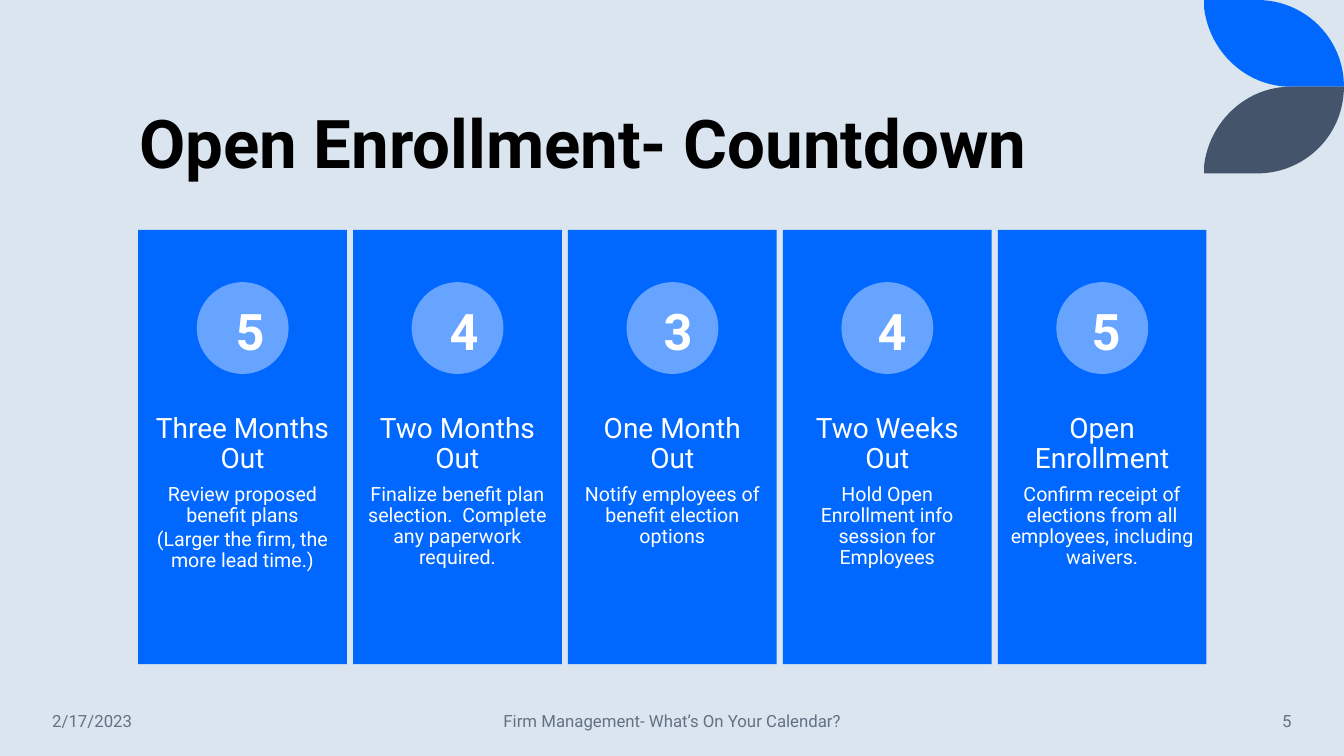
from pptx import Presentation
from pptx.dml.color import RGBColor
from pptx.enum.shapes import MSO_SHAPE as Preset
from pptx.enum.text import MSO_ANCHOR as Anchor, MSO_AUTO_SIZE as AutoSize, PP_ALIGN as Align
from pptx.util import Inches, Pt

WIDTH, HEIGHT = Inches(13.333), Inches(7.5)
BLUE, LIGHT_BLUE, SLATE = "0068FF", "66A4FF", "44546A"
BACKGROUND, WHITE, BLACK, GRAY = "DAE5EF", "FFFFFF", "000000", "637183"

CARD_LEFT, CARD_PITCH, CARD_WIDTH = 10.28, 15.99, 15.53
NUMBER_LEFT, NUMBER_PITCH = 16.8, 15.92

STEPS = [
    ("5", "Three Months Out", ["Review proposed benefit plans",
                               "(Larger the firm, the more lead time.)"]),
    ("4", "Two Months Out", ["Finalize benefit plan selection.  Complete any paperwork required."]),
    ("3", "One Month Out", ["Notify employees of benefit election options"]),
    ("4", "Two Weeks Out", ["Hold Open Enrollment info session for Employees"]),
    ("5", "Open Enrollment", ["Confirm receipt of elections from all employees, including waivers."]),
]


def percent(left, top, width, height):
    return (int(WIDTH * left / 100), int(HEIGHT * top / 100),
            int(WIDTH * width / 100), int(HEIGHT * height / 100))


def paint(fill, color):
    fill.solid()
    fill.fore_color.rgb = RGBColor.from_string(color)


def finish(shape, color):
    paint(shape.fill, color)
    shape.line.fill.background()
    shape.shadow.inherit = False


def style(paragraph, size, color, align, bold=False, spacing=1.0, after=0):
    paragraph.alignment = align
    paragraph.line_spacing = spacing
    paragraph.space_before = Pt(0)
    paragraph.space_after = Pt(after)
    for run in paragraph.runs:
        run.font.name = "Roboto"
        run.font.size = Pt(size)
        run.font.bold = bold
        run.font.color.rgb = RGBColor.from_string(color)


def add_preset(slide, preset, box, color):
    finish(slide.shapes.add_shape(preset, *percent(*box)), color)


def add_text(slide, box, text, anchor=Anchor.TOP):
    text_frame = slide.shapes.add_textbox(*percent(*box)).text_frame
    text_frame.word_wrap = True
    text_frame.vertical_anchor = anchor
    text_frame.text = text
    return text_frame


def curve(start, first, second, end, steps=24):
    points = []
    for step in range(1, steps + 1):
        t = step / steps
        weights = ((1 - t) ** 3, 3 * t * (1 - t) ** 2, 3 * t * t * (1 - t), t ** 3)
        points.append(tuple(
            sum(weight * value for weight, value in zip(weights, values))
            for values in zip(start, first, second, end)))
    return points


def add_leaf(slide, box, color, flipped=False):
    left, top, width, height = percent(*box)
    outline = [(0, 0), (0.38, 0)]
    outline += curve((0.38, 0), (0.72, 0), (1, 0.44), (1, 1))
    outline += [(0.62, 1)]
    outline += curve((0.62, 1), (0.3, 1), (0.04, 0.6), (0, 0.1))
    points = [(round(left + width * x), round(top + height * (1 - y if flipped else y)))
              for x, y in outline]
    builder = slide.shapes.build_freeform(*points[0])
    builder.add_line_segments(points[1:], close=True)
    finish(builder.convert_to_shape(), color)


def add_title(slide, box, text):
    title = slide.shapes.title
    title.left, title.top, title.width, title.height = percent(*box)
    text_frame = title.text_frame
    text_frame.text = text
    text_frame.word_wrap = True
    text_frame.auto_size = AutoSize.NONE
    text_frame.vertical_anchor = Anchor.BOTTOM
    style(text_frame.paragraphs[0], 48, BLACK, Align.LEFT, bold=True, spacing=0.9)


def add_footer(slide, left, width, text, align):
    text_frame = add_text(slide, (left, 92.67, width, 5.33), text, Anchor.MIDDLE)
    style(text_frame.paragraphs[0], 12, GRAY, align)


def add_card(slide, index, heading, details):
    left = CARD_LEFT + index * CARD_PITCH
    add_preset(slide, Preset.RECTANGLE, (left, 30.4, CARD_WIDTH, 57.47), BLUE)
    text_frame = add_text(slide, (left, 53.33, CARD_WIDTH, 22.93), heading)
    text_frame.margin_left = text_frame.margin_right = Inches(0.11)
    text_frame.margin_top = text_frame.margin_bottom = Inches(0.11)
    style(text_frame.paragraphs[0], 20, WHITE, Align.CENTER, spacing=0.9, after=7)
    for detail in details:
        paragraph = text_frame.add_paragraph()
        paragraph.text = detail
        style(paragraph, 14, WHITE, Align.CENTER, spacing=0.9, after=2.1)
    add_preset(slide, Preset.OVAL, (left + 4.36, 37.33, 6.83, 12.13), LIGHT_BLUE)


def add_number(slide, index, number):
    left = NUMBER_LEFT + index * NUMBER_PITCH
    text_frame = add_text(slide, (left, 39.07, 2.85, 9.47), number)
    text_frame.auto_size = AutoSize.SHAPE_TO_FIT_TEXT
    style(text_frame.paragraphs[0], 36, WHITE, Align.CENTER, bold=True)


def main():
    presentation = Presentation()
    presentation.slide_width, presentation.slide_height = WIDTH, HEIGHT
    slide = presentation.slides.add_slide(presentation.slide_layouts[5])
    paint(slide.background.fill, BACKGROUND)

    add_leaf(slide, (89.6, 0, 10.4, 11.47), BLUE)
    add_leaf(slide, (89.6, 11.47, 10.4, 11.47), SLATE, flipped=True)
    add_title(slide, (9.6, 5.6, 80.18, 19.33), "Open Enrollment- Countdown")

    add_footer(slide, 3.15, 13.95, "2/17/2023", Align.LEFT)
    add_footer(slide, 33.15, 33.75, "Firm Management- What’s On Your Calendar?", Align.CENTER)
    add_footer(slide, 83.25, 13.58, "5", Align.RIGHT)

    for index, (number, heading, details) in enumerate(STEPS):
        add_card(slide, index, heading, details)
        add_number(slide, index, number)

    presentation.save("out.pptx")


if __name__ == "__main__":
    main()
